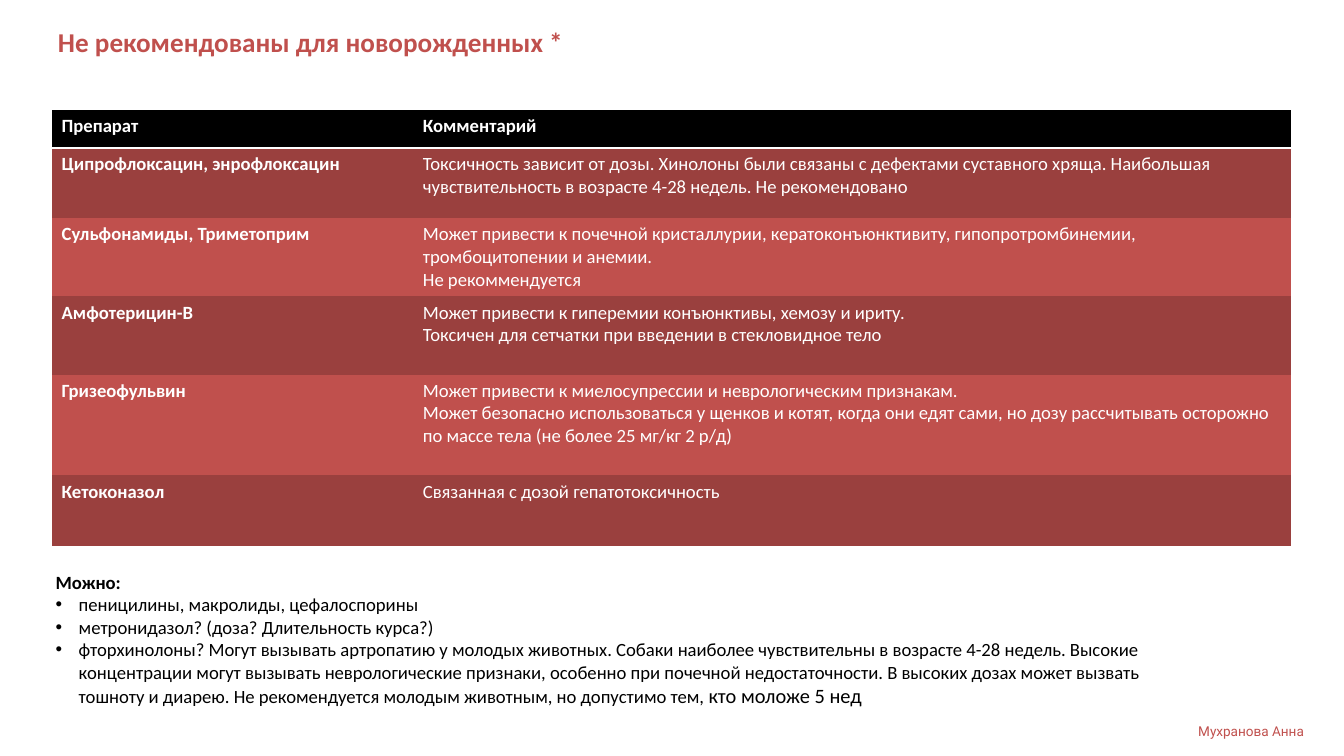
from lxml import etree
from pptx import Presentation
from pptx.dml.color import RGBColor
from pptx.enum.text import MSO_ANCHOR, PP_ALIGN
from pptx.oxml.ns import qn
from pptx.util import Inches, Pt

TOP = MSO_ANCHOR.TOP
LEFT, RIGHT = PP_ALIGN.LEFT, PP_ALIGN.RIGHT

BLACK, WHITE, RED, DARK_RED = "000000", "FFFFFF", "C0504D", "9A403E"
BODY_SIZE = 22
PLAIN_TABLE_STYLE = "{2D5ABB26-0587-4C30-8999-92F81FD0307C}"

COLUMN_WIDTHS = [5.91, 14.37]
HEADER = ["Препарат", "Комментарий"]
HEADER_HEIGHT = 0.62

# Drug, comment paragraphs, row height
DRUGS = [
    ("Ципрофлоксацин, энрофлоксацин",
     ["Токсичность зависит от дозы. Хинолоны были связаны с дефектами суставного хряща. "
      "Наибольшая чувствительность в возрасте 4-28 недель. Не рекомендовано"], 1.15),
    ("Сульфонамиды, Триметоприм",
     ["Может привести к почечной кристаллурии, кератоконъюнктивиту, гипопротромбинемии, "
      "тромбоцитопении и анемии.",
      "Не рекоммендуется"], 1.28),
    ("Амфотерицин-В",
     ["Может привести к гиперемии конъюнктивы, хемозу и ириту.",
      "Токсичен для сетчатки при введении в стекловидное тело"], 1.28),
    ("Гризеофульвин",
     ["Может привести к миелосупрессии и неврологическим признакам.",
      "Может безопасно использоваться у щенков и котят, когда они едят сами, "
      "но дозу рассчитывать осторожно по массе тела (не более 25 мг/кг 2 р/д)"], 1.65),
    ("Кетоконазол", ["Связанная с дозой гепатотоксичность"], 1.15),
]

# Each bullet is a list of (text, size)
ALLOWED = [
    [("пеницилины, макролиды, цефалоспорины", BODY_SIZE)],
    [("метронидазол? (доза? Длительность курса?)", BODY_SIZE)],
    [("фторхинолоны? Могут вызывать артропатию у молодых животных. Собаки наиболее "
      "чувствительны в возрасте 4-28 недель. Высокие концентрации могут вызывать "
      "неврологические признаки, особенно при почечной недостаточности. В высоких дозах "
      "может вызвать тошноту и диарею. Не рекомендуется молодым животным, "
      "но допустимо тем, ", BODY_SIZE),
     ("кто моложе 5 нед", 24)],
]


def color(code):
    return RGBColor.from_string(code)


class SlideBuilder:
    """Holds the text style and the current slide."""

    def __init__(self, page, font="Calibri"):
        self.page = page
        self.font = font

    def span(self, para, text, size=BODY_SIZE, fill=BLACK, bold=False, font=None):
        span = para.add_run()
        span.text = text
        span.font.name = font or self.font
        span.font.size = Pt(size)
        span.font.bold = bold
        span.font.color.rgb = color(fill)

    def text_box(self, left, top, width, height, inset=(0.1, 0.05), align=LEFT):
        box = self.page.shapes.add_textbox(
            Inches(left), Inches(top), Inches(width), Inches(height))
        frame = box.text_frame
        frame.word_wrap = True
        frame.vertical_anchor = TOP
        frame.margin_left = frame.margin_right = Inches(inset[0])
        frame.margin_top = frame.margin_bottom = Inches(inset[1])
        frame.paragraphs[0].alignment = align
        return frame

    def bullet(self, frame, parts, indent=0.38):
        para = frame.add_paragraph()
        props = para._p.get_or_add_pPr()
        props.set("marL", str(Inches(indent)))
        props.set("indent", str(-Inches(indent)))
        etree.SubElement(props, qn("a:buFont")).set("typeface", "Arial")
        etree.SubElement(props, qn("a:buChar")).set("char", "•")
        for text, size in parts:
            self.span(para, text, size)

    def cell(self, cell, lines, fill, bold):
        cell.fill.solid()
        cell.fill.fore_color.rgb = color(fill)
        cell.margin_left = cell.margin_right = Inches(0.16)
        cell.margin_top = cell.margin_bottom = Inches(0.08)
        frame = cell.text_frame
        for number, line in enumerate(lines):
            para = frame.add_paragraph() if number else frame.paragraphs[0]
            self.span(para, line, fill=WHITE, bold=bold)

    def bottom_border(self, cell, fill, width):
        line = etree.Element(qn("a:lnB"), w=str(Pt(width)))
        solid = etree.SubElement(line, qn("a:solidFill"))
        etree.SubElement(solid, qn("a:srgbClr")).set("val", fill)
        cell._tc.get_or_add_tcPr().insert(0, line)

    def table(self, left, top, widths, heights):
        frame = self.page.shapes.add_table(
            len(heights), len(widths), Inches(left), Inches(top),
            Inches(sum(widths)), Inches(sum(heights)))
        table = frame.table
        table._tbl.tblPr.find(qn("a:tableStyleId")).text = PLAIN_TABLE_STYLE
        for column, width in zip(table.columns, widths):
            column.width = Inches(width)
        for row, height in zip(table.rows, heights):
            row.height = Inches(height)
        return table


def main():
    deck = Presentation()
    deck.slide_width, deck.slide_height = Inches(21.99), Inches(12.37)
    builder = SlideBuilder(deck.slides.add_slide(deck.slide_layouts[6]))

    # Drug table
    heights = [HEADER_HEIGHT] + [height for _, _, height in DRUGS]
    table = builder.table(0.85, 1.8, COLUMN_WIDTHS, heights)
    for column, label in enumerate(HEADER):
        builder.cell(table.cell(0, column), [label], BLACK, True)
        builder.bottom_border(table.cell(0, column), WHITE, 2)
    for row, (drug, comments, _) in enumerate(DRUGS, start=1):
        fill = DARK_RED if row % 2 else RED
        builder.cell(table.cell(row, 0), [drug], fill, True)
        builder.cell(table.cell(row, 1), comments, fill, False)

    # Title
    title = builder.text_box(0.85, 0.36, 19.85, 0.9)
    builder.span(title.paragraphs[0], "Не рекомендованы для новорожденных *", 32, RED, True)

    # Allowed drugs
    allowed = builder.text_box(0.81, 9.29, 18.72, 2.36)
    builder.span(allowed.paragraphs[0], "Можно:", bold=True)
    for parts in ALLOWED:
        builder.bullet(allowed, parts)

    # Author
    author = builder.text_box(10.04, 11.83, 11.35, 0.27, inset=(0, 0), align=RIGHT)
    builder.span(author.paragraphs[0], "Мухранова Анна ", 16, RED, font="Roboto")

    deck.save("out.pptx")


if __name__ == "__main__":
    main()
